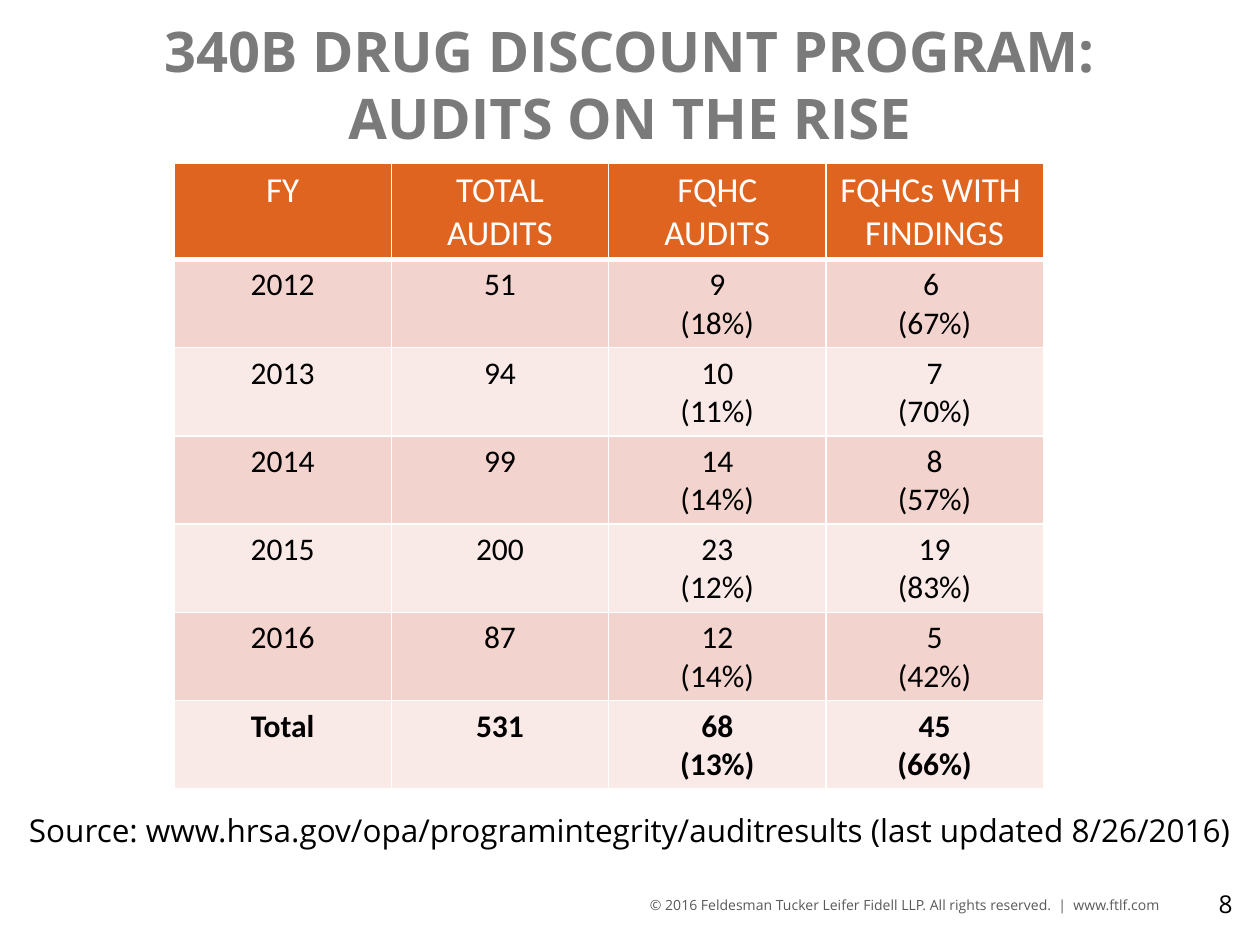
from dataclasses import dataclass

import pptx
import pptx.dml.color
import pptx.enum.text
import pptx.oxml
import pptx.oxml.ns
import pptx.presentation
import pptx.slide
import pptx.table
import pptx.text.text
import pptx.util

Pt = pptx.util.Pt
Align = pptx.enum.text.PP_ALIGN


@dataclass(frozen=True)
class Theme:
    text_font: str = "Open Sans"
    table_font: str = "Calibri"
    black: str = "000000"
    white: str = "FFFFFF"
    title_grey: str = "7A7A7A"
    footer_grey: str = "595959"
    header_fill: str = "DF6420"
    band_fills: tuple[str, str] = ("F3D3CD", "F9EAE8")
    title_size: float = 32
    header_size: float = 20
    body_size: float = 18
    number_size: float = 14
    footer_size: float = 8
    rule: float = 1
    header_rule: float = 3


THEME = Theme()


@dataclass(frozen=True)
class Style:
    font: str
    size: float
    color: str
    align: Align | None = Align.CENTER
    bold: bool = False


@dataclass(frozen=True)
class Label:
    text: str
    left: float
    top: float
    width: float
    height: float
    style: Style


LABELS = [
    Label("© 2016 Feldesman Tucker Leifer Fidell LLP. All rights reserved.  |  www.ftlf.com",
          364.3, 507.6, 312.5, 19.4,
          Style(THEME.text_font, THEME.footer_size, THEME.footer_grey, Align.LEFT)),
    Label("8", 669.6, 501.8, 41.8, 28.8,
          Style(THEME.text_font, THEME.number_size, THEME.black, Align.RIGHT)),
    Label("340B DRUG DISCOUNT PROGRAM:\vAUDITS ON THE RISE", 36, 2.9, 648, 90,
          Style(THEME.text_font, THEME.title_size, THEME.title_grey, bold=True)),
    Label("Source: www.hrsa.gov/opa/programintegrity/auditresults (last updated 8/26/2016)",
          0, 460.1, 720, 28.8,
          Style(THEME.text_font, THEME.body_size, THEME.black)),
]

AUDITS = [
    ("FY", "TOTAL\nAUDITS", "FQHC AUDITS", "FQHCs WITH \nFINDINGS"),
    ("2012", "51", "9\n(18%)", "6 \n(67%)"),
    ("2013", "94", "10\n(11%)", "7\n(70%)"),
    ("2014", "99", "14\n(14%)", "8\n(57%)"),
    ("2015", "200", "23\n(12%)", "19\n(83%)"),
    ("2016", "87", "12\n(14%)", "5\n(42%)"),
    ("Total", "531", "68\n(13%)", "45\n(66%)"),
]
TABLE_LEFT, TABLE_TOP = 99.4, 93
COLUMN_WIDTH = 124.2
HEADER_HEIGHT, BODY_HEIGHT = 51, 46.8


def rgb(color: str) -> pptx.dml.color.RGBColor:
    return pptx.dml.color.RGBColor.from_string(color)


def write(frame: pptx.text.text.TextFrame, text: str, style: Style) -> None:
    frame.text = text
    for para in frame.paragraphs:
        para.alignment = style.align
        for span in para.runs:
            span.font.name = style.font
            span.font.size = Pt(style.size)
            span.font.bold = style.bold
            span.font.color.rgb = rgb(style.color)


def add_label(page: pptx.slide.Slide, label: Label) -> None:
    box = page.shapes.add_textbox(Pt(label.left), Pt(label.top),
                                  Pt(label.width), Pt(label.height))
    box.text_frame.word_wrap = True
    box.text_frame.vertical_anchor = pptx.enum.text.MSO_ANCHOR.MIDDLE
    write(box.text_frame, label.text, label.style)


def set_borders(cell: pptx.table._Cell, bottom: float) -> None:
    """Rule all four sides in white; line elements must precede the fill."""
    properties = cell._tc.get_or_add_tcPr()
    widths = {"lnL": THEME.rule, "lnR": THEME.rule, "lnT": THEME.rule, "lnB": bottom}
    for position, (side, width) in enumerate(widths.items()):
        line = pptx.oxml.parse_xml(
            f'<a:{side} {pptx.oxml.ns.nsdecls("a")} w="{Pt(width)}"><a:solidFill>'
            f'<a:srgbClr val="{THEME.white}"/></a:solidFill></a:{side}>')
        properties.insert(position, line)


def add_audit_table(page: pptx.slide.Slide) -> None:
    rows, columns = len(AUDITS), len(AUDITS[0])
    height = HEADER_HEIGHT + BODY_HEIGHT * (rows - 1)
    table = page.shapes.add_table(rows, columns, Pt(TABLE_LEFT), Pt(TABLE_TOP),
                                  Pt(COLUMN_WIDTH * columns), Pt(height)).table
    for column in table.columns:
        column.width = Pt(COLUMN_WIDTH)
    for index, values in enumerate(AUDITS):
        header = index == 0
        table.rows[index].height = Pt(HEADER_HEIGHT if header else BODY_HEIGHT)
        if header:
            style = Style(THEME.table_font, THEME.header_size, THEME.white)
            fill = THEME.header_fill
        else:
            style = Style(THEME.table_font, THEME.body_size, THEME.black,
                          bold=index == rows - 1)
            fill = THEME.band_fills[(index - 1) % 2]
        for cell, value in zip(table.rows[index].cells, values):
            write(cell.text_frame, value, style)
            cell.fill.solid()
            cell.fill.fore_color.rgb = rgb(fill)
            set_borders(cell, THEME.header_rule if header else THEME.rule)


def main() -> None:
    deck = pptx.Presentation()
    deck.slide_width, deck.slide_height = Pt(720), Pt(540)
    page = deck.slides.add_slide(deck.slide_layouts[6])
    for label in LABELS:
        add_label(page, label)
    add_audit_table(page)
    deck.save("out.pptx")


if __name__ == "__main__":
    main()
